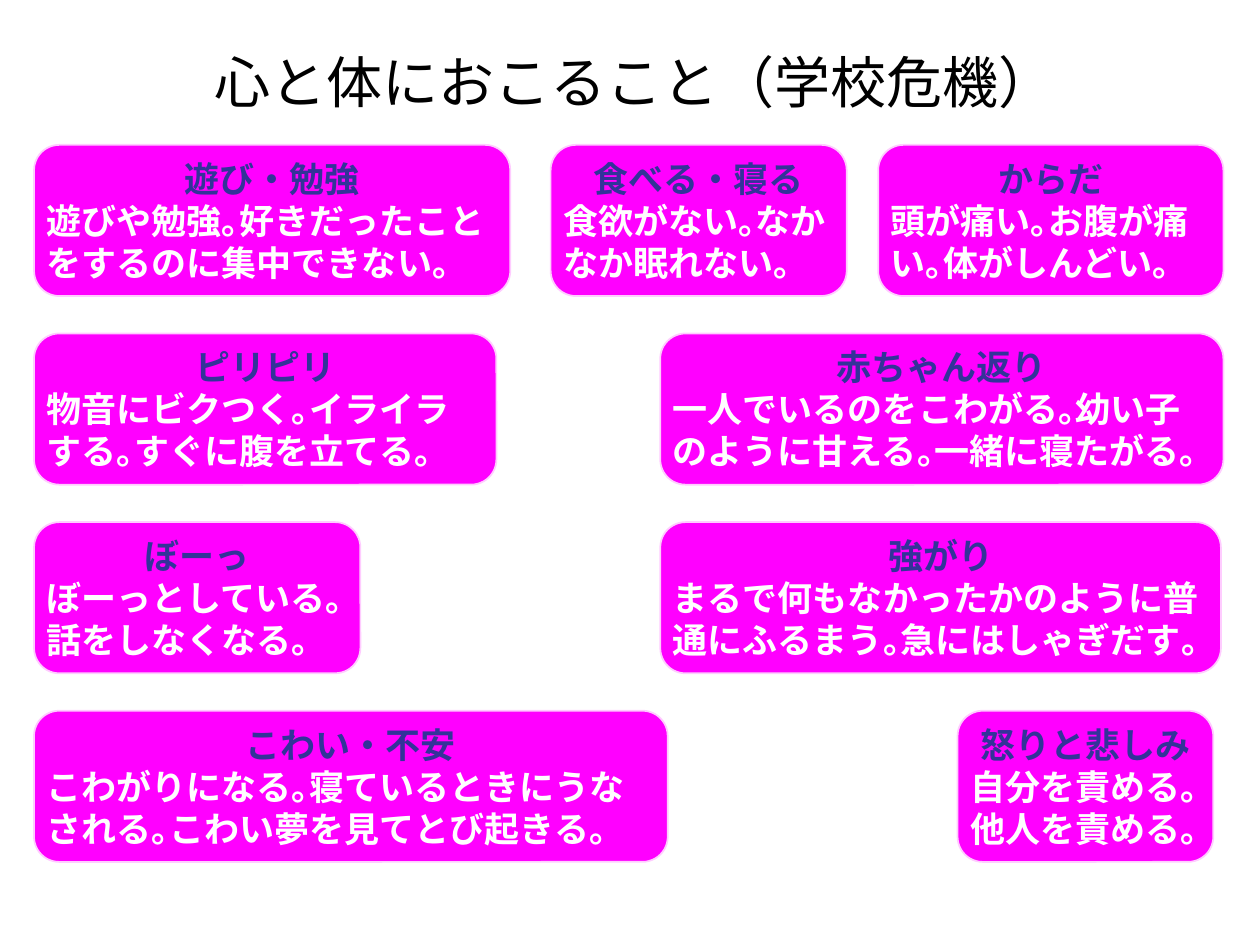
from lxml.etree import SubElement
from pptx import Presentation
from pptx.dml.color import RGBColor
from pptx.enum.shapes import MSO_SHAPE
from pptx.enum.text import MSO_ANCHOR, MSO_AUTO_SIZE, PP_ALIGN
from pptx.oxml.ns import qn
from pptx.util import Inches, Pt

BLACK = RGBColor(0x00, 0x00, 0x00)
WHITE = RGBColor(0xFF, 0xFF, 0xFF)
MAGENTA = RGBColor(0xFF, 0x00, 0xFF)
PINK = RGBColor(0xFF, 0xCC, 0xFF)
INDIGO = RGBColor(0x33, 0x33, 0x99)
JAPANESE_FONT = "Noto Sans CJK JP"

# Content: rows of cards as (left, width, heading, description)
TITLE = "心と体におこること（学校危機）"
ROWS = [
    [
        (0.27, 3.78, "遊び・勉強", "遊びや勉強｡好きだったことをするのに集中できない｡"),
        (4.37, 2.35, "食べる・寝る", "食欲がない｡なかなか眠れない｡"),
        (6.97, 2.74, "からだ", "頭が痛い｡お腹が痛い｡体がしんどい｡"),
    ],
    [
        (0.27, 3.67, "ピリピリ", "物音にビクつく｡イライラする｡すぐに腹を立てる｡"),
        (5.24, 4.47, "赤ちゃん返り", "一人でいるのをこわがる｡幼い子のように甘える｡一緒に寝たがる｡"),
    ],
    [
        (0.27, 2.59, "ぼーっ", "ぼーっとしている｡話をしなくなる｡"),
        (5.24, 4.45, "強がり", "まるで何もなかったかのように普通にふるまう｡急にはしゃぎだす｡"),
    ],
    [
        (0.27, 5.03, "こわい・不安", "こわがりになる｡寝ているときにうなされる｡こわい夢を見てとび起きる｡"),
        (7.6, 2.03, "怒りと悲しみ", "自分を責める｡他人を責める｡"),
    ],
]
FIRST_TOP, ROW_STEP, CARD_HEIGHT = 1.15, 1.497, 1.2
CARD_MARGIN = 0.04


def write(paragraph, text, size=20, color=WHITE, font=JAPANESE_FONT, bold=False,
          align=PP_ALIGN.LEFT, line_height=None):
    paragraph.alignment = align
    if line_height:
        paragraph.line_spacing = Pt(line_height)
    run = paragraph.add_run()
    run.text = text
    run.font.size = Pt(size)
    run.font.bold = bold
    run.font.color.rgb = color
    run.font.name = font
    # East Asian characters need their own typeface
    properties = run.font._element
    properties.set("lang", "ja-JP")
    SubElement(properties, qn("a:ea")).set("typeface", JAPANESE_FONT)


def add_card(slide, left, top, width, heading, description):
    card = slide.shapes.add_shape(MSO_SHAPE.ROUNDED_RECTANGLE, Inches(left), Inches(top),
                                  Inches(width), Inches(CARD_HEIGHT))
    card.shadow.inherit = False
    card.adjustments[0] = 0.167
    card.fill.solid()
    card.fill.fore_color.rgb = MAGENTA
    card.line.color.rgb = PINK
    card.line.width = Pt(1)
    frame = card.text_frame
    frame.word_wrap = True
    frame.auto_size = MSO_AUTO_SIZE.SHAPE_TO_FIT_TEXT
    frame.vertical_anchor = MSO_ANCHOR.TOP
    frame.margin_left = frame.margin_right = Inches(CARD_MARGIN)
    frame.margin_top = frame.margin_bottom = Inches(CARD_MARGIN)
    write(frame.paragraphs[0], heading, color=INDIGO, bold=True,
          align=PP_ALIGN.CENTER, line_height=24)
    write(frame.add_paragraph(), description, bold=True, line_height=24)


presentation = Presentation()
presentation.slide_width, presentation.slide_height = Inches(10), Inches(7.5)
slide = presentation.slides.add_slide(presentation.slide_layouts[6])

# Title
title = slide.shapes.add_textbox(Inches(1.46), Inches(0.21), Inches(7.16), Inches(0.87))
title.text_frame.word_wrap = True
title.text_frame.vertical_anchor = MSO_ANCHOR.MIDDLE
write(title.text_frame.paragraphs[0], TITLE, size=32, color=BLACK, font="Arial",
      align=PP_ALIGN.CENTER)

# Cards
for row_number, row in enumerate(ROWS):
    for left, width, heading, description in row:
        add_card(slide, left, FIRST_TOP + row_number * ROW_STEP, width, heading, description)

presentation.save("out.pptx")
